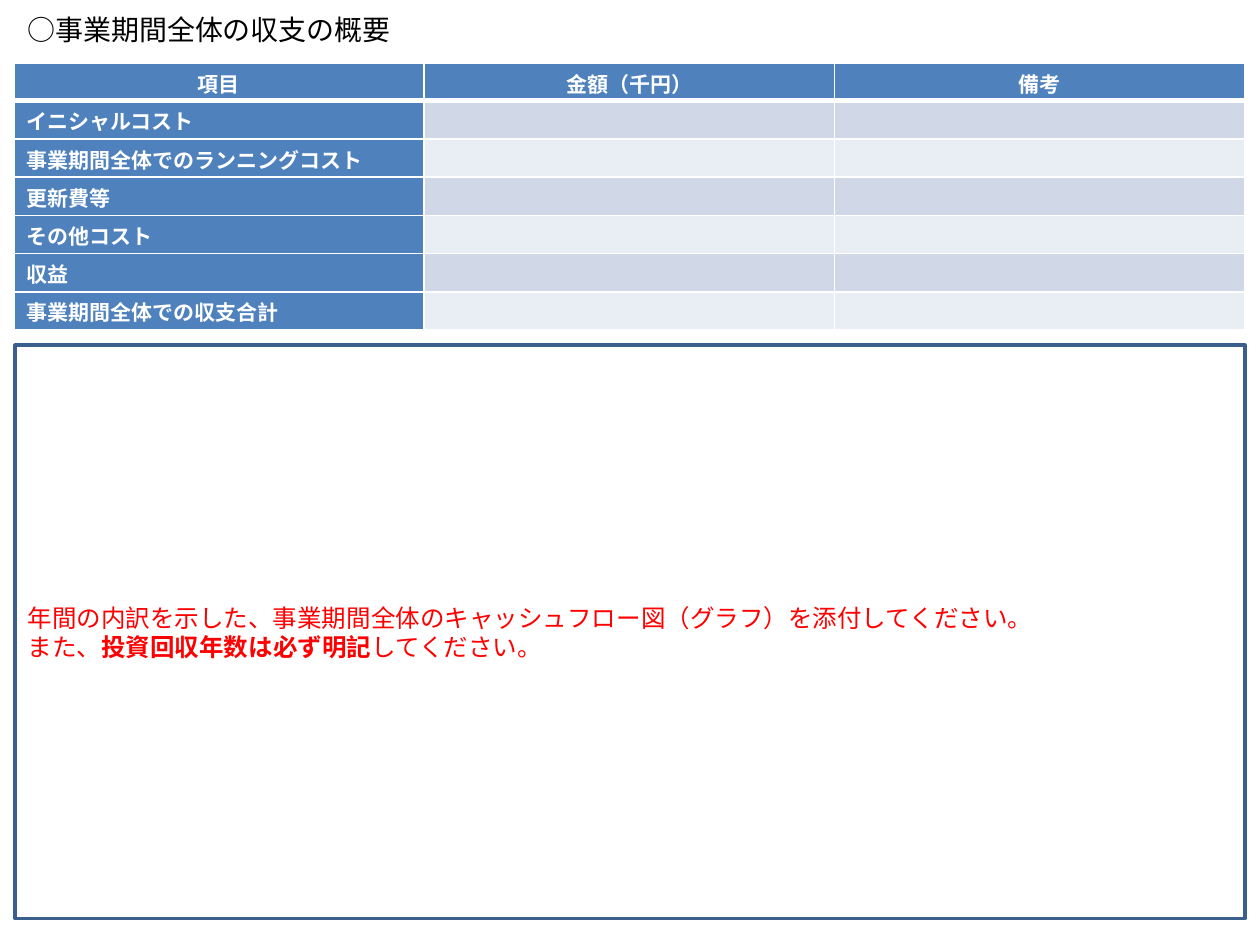
from pptx import Presentation
from pptx.dml.color import RGBColor
from pptx.enum.shapes import MSO_SHAPE
from pptx.enum.text import MSO_ANCHOR, PP_ALIGN
from pptx.oxml import parse_xml
from pptx.oxml.ns import nsdecls, qn
from pptx.util import Inches, Pt
from lxml.etree import SubElement

FONT = "Noto Sans CJK JP"


def color(hex_string):
    return RGBColor.from_string(hex_string)


def format_run(span, size, hex_string, bold=False, latin=FONT):
    span.font.size = Pt(size)
    span.font.bold = bold
    span.font.color.rgb = color(hex_string)
    span.font.name = latin
    SubElement(span.font._element, qn("a:ea")).set("typeface", FONT)


deck = Presentation()
deck.slide_width, deck.slide_height = Inches(10), Inches(7.5)
page = deck.slides.add_slide(deck.slide_layouts[5])

# Title
title = page.shapes.title
title.left, title.top = Inches(0.12), Inches(0.05)
title.width, title.height = Inches(4.59), Inches(0.37)
title.text_frame.text = "○事業期間全体の収支の概要"
title.text_frame.vertical_anchor = MSO_ANCHOR.MIDDLE
para = title.text_frame.paragraphs[0]
para.alignment = PP_ALIGN.LEFT
para.line_spacing = Pt(19)
format_run(para.runs[0], 16, "000000")

# Income and cost table
headers = ["項目", "金額（千円）", "備考"]
items = ["イニシャルコスト", "事業期間全体でのランニングコスト", "更新費等",
         "その他コスト", "収益", "事業期間全体での収支合計"]
rows = [headers] + [[item, "", ""] for item in items]
table = page.shapes.add_table(len(rows), len(headers), Inches(0.11), Inches(0.5),
                              Inches(9.77), Inches(2.1)).table
for row_index, texts in enumerate(rows):
    table.rows[row_index].height = Inches(0.3)
    for column_index, text in enumerate(texts):
        cell = table.cell(row_index, column_index)
        cell.margin_top, cell.margin_bottom = Inches(0.08), Inches(0.02)

        # White borders, thicker between the header and the first item
        for side in "LRTB":
            thick = (row_index, side) in [(0, "B"), (1, "T")]
            cell._tc.get_or_add_tcPr().append(parse_xml(
                f'<a:ln{side} {nsdecls("a")} w="{Pt(3 if thick else 1)}"><a:solidFill>'
                f'<a:srgbClr val="FFFFFF"/></a:solidFill></a:ln{side}>'))

        cell.fill.solid()
        if row_index == 0 or column_index == 0:
            cell.fill.fore_color.rgb = color("4F81BD")
        else:
            cell.fill.fore_color.rgb = color("D0D8E8" if row_index % 2 else "E9EDF4")

        para = cell.text_frame.paragraphs[0]
        para.line_spacing = Pt(14.4)
        if text:
            para.text = text
            para.alignment = PP_ALIGN.CENTER if row_index == 0 else PP_ALIGN.LEFT
            format_run(para.runs[0], 12, "FFFFFF", True, "Calibri")
        else:
            SubElement(para._p, qn("a:endParaRPr")).set("sz", "1200")

# Frame for the cash flow chart, with instructions
frame = page.shapes.add_shape(MSO_SHAPE.RECTANGLE, Inches(0.12), Inches(2.74),
                              Inches(9.76), Inches(4.55))
frame.shadow.inherit = False
frame.fill.background()
frame.line.color.rgb = color("3A5F8C")
frame.line.width = Pt(2)
frame.text_frame.word_wrap = True
frame.text_frame.vertical_anchor = MSO_ANCHOR.MIDDLE
instructions = [
    [("年間の内訳を示した、事業期間全体のキャッシュフロー図（グラフ）を添付してください。", False)],
    [("また、", False), ("投資回収年数は必ず明記", True), ("してください。", False)],
]
for index, parts in enumerate(instructions):
    para = frame.text_frame.add_paragraph() if index else frame.text_frame.paragraphs[0]
    para.alignment = PP_ALIGN.LEFT
    para.line_spacing = Pt(16.6)
    for text, bold in parts:
        span = para.add_run()
        span.text = text
        format_run(span, 14, "FF0000", bold)

deck.save("out.pptx")
